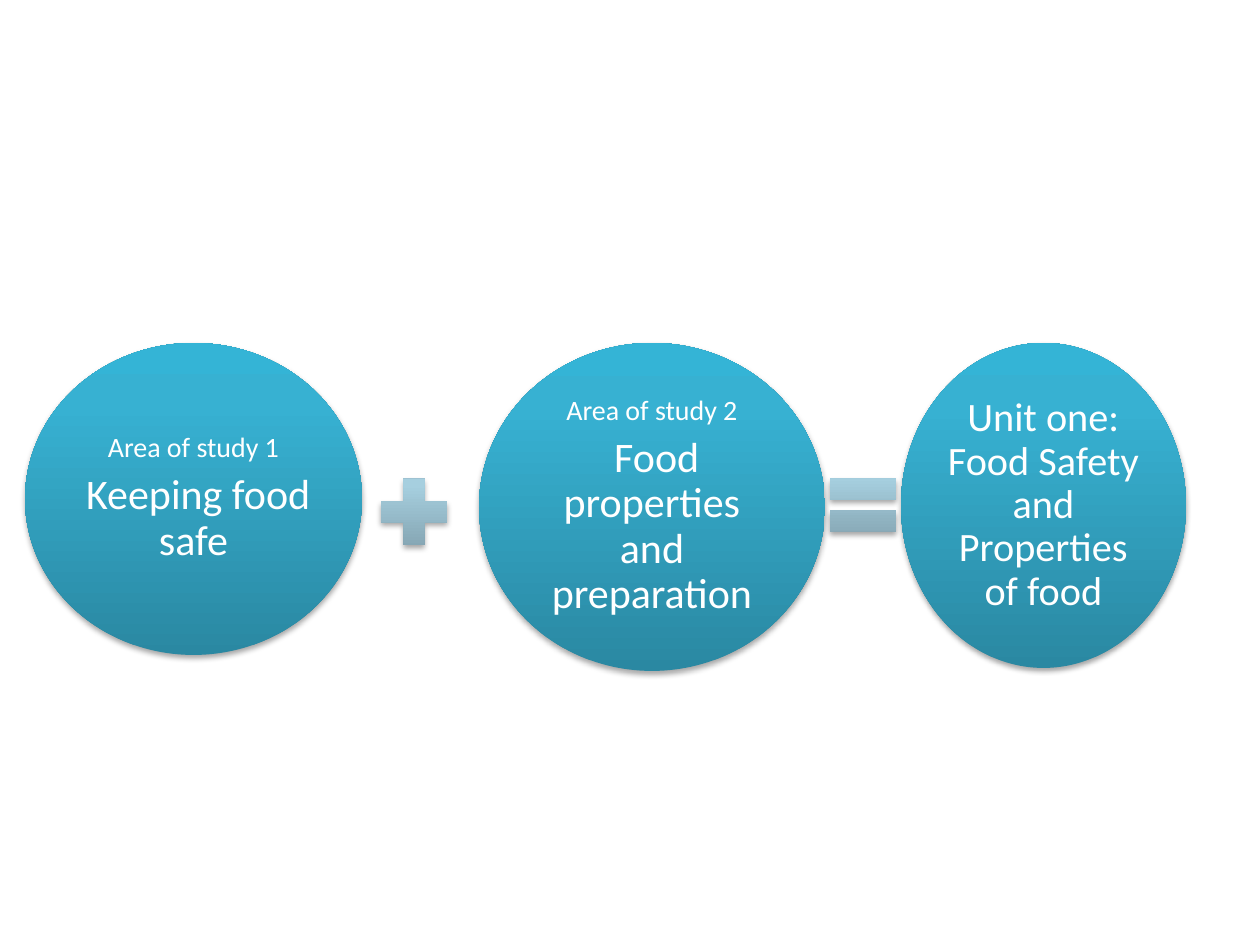
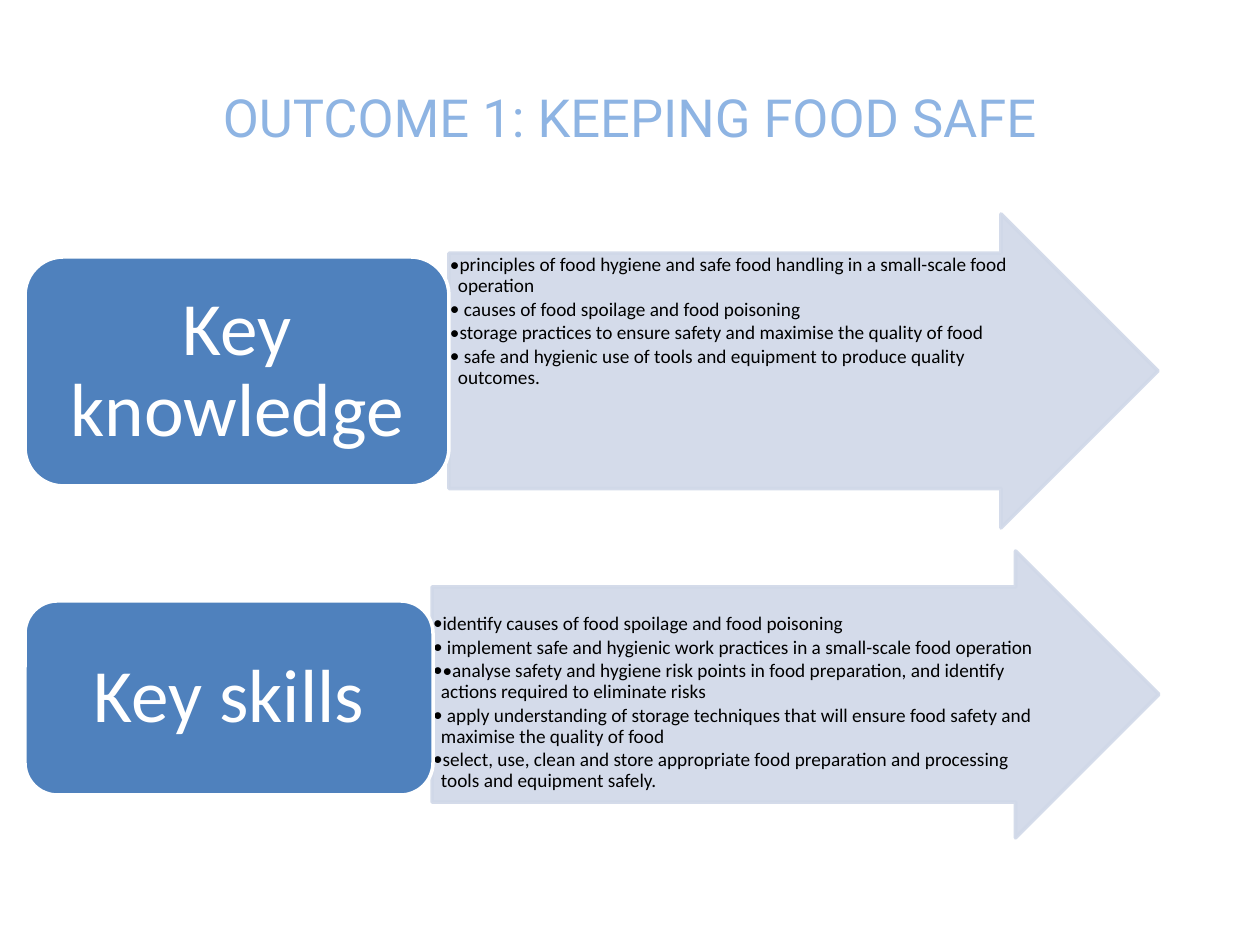
import lxml.etree
import pptx
import pptx.dml.color
import pptx.enum.shapes
import pptx.enum.text
import pptx.oxml
import pptx.oxml.ns
import pptx.util

PX = 914400 / 126
SHAPES = pptx.enum.shapes.MSO_SHAPE
ALIGN = pptx.enum.text.PP_ALIGN
ANCHOR = pptx.enum.text.MSO_ANCHOR
qn = pptx.oxml.ns.qn
NSDECL = pptx.oxml.ns.nsdecls("a")
COLORS = {
    "text": "FFFFFF", "bullet": "000000", "title": "8EB4E3",
    "label": "4F81BD", "arrow": "D0D8E8", "shadow": "000000",
}
CIRCLE_GRADIENT = {0: "2A88A2", 80: "37B1D2", 100: "34B4D6"}
SIGN_GRADIENT = {0: "809FAC", 80: "A6CFDF", 100: "A5D0E1"}


def add_block(slide, kind, box, gradient=None):
    """Add a preset shape at a px box; a gradient also brings the soft shadow."""
    block = slide.shapes.add_shape(kind, *[round(v * PX) for v in box])
    block.shadow.inherit = False
    if gradient:
        block.line.fill.background()
        stops = "".join(f'<a:gs pos="{pos * 1000}"><a:srgbClr val="{color}"/></a:gs>'
                        for pos, color in gradient.items())
        block.fill.background()
        properties = block._element.spPr
        properties.replace(properties.find(qn("a:noFill")), pptx.oxml.parse_xml(
            f'<a:gradFill {NSDECL} rotWithShape="1"><a:gsLst>{stops}</a:gsLst>'
            '<a:lin ang="16200000" scaled="0"/></a:gradFill>'))
        properties.find(qn("a:effectLst")).append(pptx.oxml.parse_xml(
            f'<a:outerShdw {NSDECL} blurRad="40000" dist="23000" dir="5400000" '
            f'rotWithShape="0"><a:srgbClr val="{COLORS["shadow"]}">'
            '<a:alpha val="35000"/></a:srgbClr></a:outerShdw>'))
    return block


def write_text(block, lines, color, align, spacing, margins, anchor=ANCHOR.MIDDLE):
    """Fill a shape with (text, size) lines; spacing is a share of the size."""
    frame = block.text_frame
    frame.word_wrap = True
    frame.vertical_anchor = anchor
    for side, margin in zip(("left", "top", "right", "bottom"), margins):
        setattr(frame, f"margin_{side}", round(margin * PX))
    for index, (text, size) in enumerate(lines):
        paragraph = frame.paragraphs[0] if index == 0 else frame.add_paragraph()
        look = {"alignment": align, "line_spacing": 0.9,
                "space_after": pptx.util.Pt(size * spacing)}
        for name, value in look.items():
            setattr(paragraph, name, value)
        run = paragraph.add_run()
        run.text = text
        run.font.name = "Calibri"
        run.font.size = pptx.util.Pt(size)
        run.font.color.rgb = pptx.dml.color.RGBColor.from_string(COLORS[color])


deck = pptx.Presentation()
deck.slide_width = round(1260 * PX)
deck.slide_height = round(945 * PX)

# Slide 1: the two areas of study add up to the unit
unit_slide = deck.slides.add_slide(deck.slide_layouts[6])
CIRCLE_TOP = 343
circles = [
    (25, 337, 312, [("Area of study 1", 16), (" Keeping food safe", 24)]),
    (479, 346, 328, [("Area of study 2", 16), (" Food properties and preparation", 24)]),
    (901, 285, 325, [("Unit one: Food Safety and Properties of food", 23)]),
]
for left, width, height, lines in circles:
    circle = add_block(unit_slide, SHAPES.OVAL, (left, CIRCLE_TOP, width, height),
                       CIRCLE_GRADIENT)
    write_text(circle, lines, "text", ALIGN.CENTER, 0.35, (1, 2, 1, 2))
for kind, left, top in [(SHAPES.MATH_PLUS, 369, 467), (SHAPES.MATH_EQUAL, 818, 460)]:
    add_block(unit_slide, kind, (left, top, 90, 90), SIGN_GRADIENT)

# Slide 2: knowledge and skills of the first outcome
outcome_slide = deck.slides.add_slide(deck.slide_layouts[5])
title = outcome_slide.shapes.title
for name, value in {"left": 63, "top": 38, "width": 1134, "height": 158}.items():
    setattr(title, name, round(value * PX))
title.text_frame.text = "OUTCOME 1: KEEPING FOOD SAFE"
title.text_frame.vertical_anchor = ANCHOR.MIDDLE
heading = title.text_frame.paragraphs[0]
heading.alignment = ALIGN.CENTER
for name, value in {"name": "Roboto", "size": pptx.util.Pt(30)}.items():
    setattr(heading.runs[0].font, name, value)
heading.runs[0].font.color.rgb = pptx.dml.color.RGBColor.from_string(COLORS["title"])

# Each row: label, label box, arrow box, space above the list, list
rows = [
    ("Key knowledge", (25, 257, 424, 229), (449, 214, 709, 314), 2, [
        "principles of food hygiene and safe food handling in a small-scale food operation",
        " causes of food spoilage and food poisoning",
        "storage practices to ensure safety and maximise the quality of food",
        " safe and hygienic use of tools and equipment to produce quality outcomes.",
    ]),
    ("Key skills", (25, 601, 408, 194), (432, 551, 727, 287), 27, [
        "identify causes of food spoilage and food poisoning",
        " implement safe and hygienic work practices in a small-scale food operation",
        "•analyse safety and hygiene risk points in food preparation, and identify "
        "actions required to eliminate risks",
        " apply understanding of storage techniques that will ensure food safety and "
        "maximise the quality of food",
        "select, use, clean and store appropriate food preparation and processing "
        "tools and equipment safely.",
    ]),
]
for label, label_box, arrow_box, space_above, points in rows:
    arrow = add_block(outcome_slide, SHAPES.RIGHT_ARROW, arrow_box)
    arrow.adjustments[0] = 0.75
    arrow.adjustments[1] = 0.5
    tag = add_block(outcome_slide, SHAPES.ROUNDED_RECTANGLE, label_box)
    for block, fill, line in [(arrow, "arrow", "arrow"), (tag, "label", "text")]:
        block.fill.solid()
        block.fill.fore_color.rgb = pptx.dml.color.RGBColor.from_string(COLORS[fill])
        block.line.color.rgb = pptx.dml.color.RGBColor.from_string(COLORS[line])
        block.line.width = pptx.util.Pt(2)
    for color in arrow._element.spPr.iter(qn("a:srgbClr")):
        lxml.etree.SubElement(color, qn("a:alpha"), val="90000")

    write_text(tag, [(label, 43)], "text", ALIGN.CENTER, 0.35, (23, 11, 23, 11))
    write_text(arrow, [(point, 11) for point in points], "bullet", ALIGN.LEFT, 0.15,
               (1, space_above, 1, 1), ANCHOR.TOP)
    for paragraph in arrow.text_frame.paragraphs:
        properties = paragraph._p.get_or_add_pPr()
        properties.set("marL", "57150")
        properties.set("indent", "-57150")
        lxml.etree.SubElement(properties, qn("a:buFont"), typeface="Calibri")
        lxml.etree.SubElement(properties, qn("a:buChar"), char="•")

deck.save("out.pptx")
